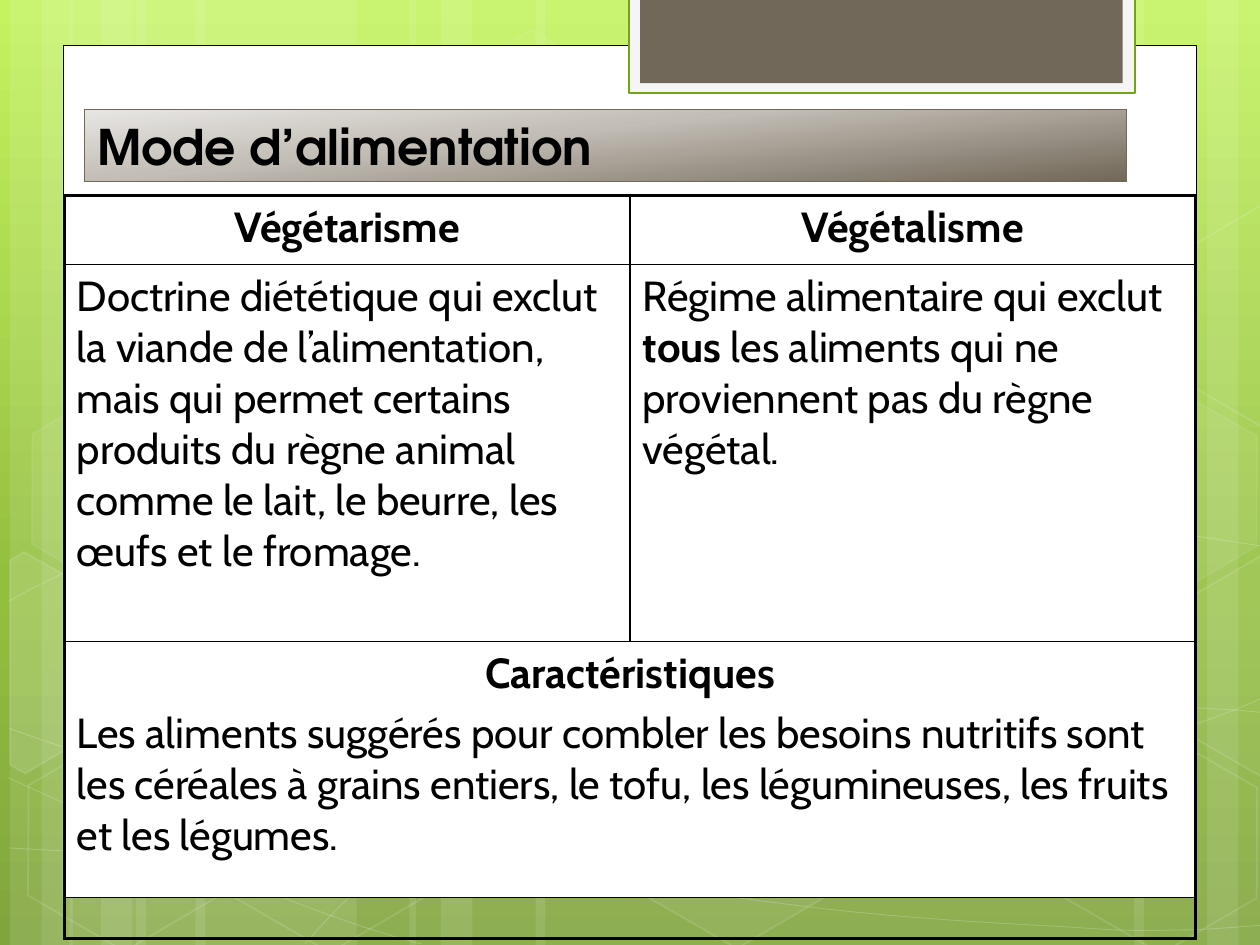
"""Build a slide that compares two plant-based diets in a table."""
from copy import deepcopy

from lxml.etree import SubElement
from pptx import Presentation
from pptx.dml.color import RGBColor
from pptx.enum.shapes import MSO_SHAPE
from pptx.enum.text import MSO_ANCHOR, MSO_AUTO_SIZE, PP_ALIGN
from pptx.oxml import parse_xml
from pptx.oxml.ns import nsdecls, qn
from pptx.util import Cm, Pt

TITLE = "Mode d’alimentation"
HEADS = ["Végétarisme", "Végétalisme"]
DEFINITIONS = [
    [("Doctrine diététique qui exclut la viande de l’alimentation, mais qui permet certains "
      "produits du règne animal comme le lait, le beurre, les œufs et le fromage.", False)],
    [("Régime alimentaire qui exclut ", False), ("tous", True),
     (" les aliments qui ne proviennent pas du règne végétal.", False)],
]
FEATURES_HEAD = "Caractéristiques"
FEATURES = ("Les aliments suggérés pour combler les besoins nutritifs sont les céréales à grains "
            "entiers, le tofu, les légumineuses, les fruits et les légumes.")
COL_WIDTH = 4.49
ROW_HEIGHTS = [0.55, 2.99, 2.36]

BACKGROUND = [(0, "C3F35F"), (62, "93BF3F"), (100, "81A53E")]
TITLE_BAR = [(0, "E8E6E4"), (40, "C2BDB5"), (100, "726859")]
STRIPES = [(1.08, 1.75), (0.08, 0.5), (0.33, 0.83), (1.55, 1.75), (0.55, 0.5), (0.8, 0.83),
           (7.33, 1.75), (9.58, 0.5), (9, 0.83), (4.25, 3.08), (3.25, 0.5), (3.5, 0.83)]
CURVES = [
    [(0.07, 6.73), (0.61, 6.76), (1.15, 6.79), (1.9, 6.78), (2.65, 6.77), (3.58, 6.75),
     (4.58, 6.65), (5.58, 6.55), (7, 6.36), (7.92, 6.17), (8.83, 5.98), (9.77, 5.68),
     (10.07, 5.51)],
    [(0.07, 4.77), (0.36, 4.61), (0.65, 4.46), (1.21, 4.31), (1.78, 4.16), (2.59, 3.94),
     (3.47, 3.87), (4.36, 3.8), (5.44, 3.79), (6.54, 3.87), (7.64, 3.95), (9.47, 4.26),
     (10.07, 4.34)],
    [(0.06, 6.17), (1.27, 6.72), (2.47, 7.27), (3.34, 7.49)],
    [(0.07, 5.78), (0.38, 5.89), (0.7, 6), (1.28, 6.16), (1.86, 6.31), (2.73, 6.56),
     (3.57, 6.73), (4.4, 6.9), (5.45, 7.08), (6.28, 7.18), (7.11, 7.29), (8, 7.33),
     (8.53, 7.36), (9.05, 7.4), (9.19, 7.38), (9.45, 7.38), (9.71, 7.37), (9.89, 7.35),
     (10.07, 7.34)],
    [(2.42, 7.49), (2.6, 7.29), (2.78, 7.09), (3.02, 6.91), (3.26, 6.73), (3.6, 6.53),
     (3.88, 6.39), (4.16, 6.25), (4.33, 6.19), (4.7, 6.09), (5.06, 5.99), (5.73, 5.85),
     (6.08, 5.78), (6.44, 5.71), (6.49, 5.71), (6.8, 5.69), (7.11, 5.66), (7.6, 5.63),
     (7.94, 5.62), (8.29, 5.61), (8.86, 5.62), (8.86, 5.62), (9.08, 5.62), (9.31, 5.62),
     (9.53, 5.62), (9.71, 5.63), (9.88, 5.64), (9.97, 5.65), (10.06, 5.66), (10.03, 5.65),
     (10.06, 5.66)],
]
HEXAGONS = [(3.34, 0.36, 4, 8), (4.97, 5.89, 6, 12), (0.11, 5.91, 0, 12), (0.14, 3.12, 7, 8),
            (1.74, 5.92, 0, 12), (7.53, 4.53, 10, 12), (8.34, 5.93, 0, 12), (8.34, 3.14, 7, 8)]
CUT_HEXAGONS = [
    (10, [(0.08, 4.45), (0.19, 4.38), (0.96, 4.82), (0.95, 5.7), (0.2, 6.14), (0.08, 6.07)]),
    (4, [(9.26, 4.85), (10.01, 4.41), (10.09, 4.46), (10.09, 6.13), (10.02, 6.17), (9.26, 5.73)]),
    (0, [(9.26, 2.07), (10.01, 1.63), (10.1, 1.68), (10.09, 3.35), (10.02, 3.39), (9.26, 2.95)]),
]
PANELS = [((0.5, 0.36, 9, 6.76), "FFFFFF", "000000", 0.5),
          ((4.99, -0.02, 4.02, 0.76), "F5F5F5", "74A510", 1.25),
          ((5.08, -0.02, 3.83, 0.68), "71685A", None, 0)]


def inch(*values):
    return [Cm(v * 2.54) for v in values]


def paint(fill, color, alpha=100):
    if not color or not alpha:
        fill.background()
        return
    fill.solid()
    fill.fore_color.rgb = RGBColor.from_string(color)
    if alpha < 100:
        clr = fill._xPr.find(qn("a:solidFill"))[0]
        SubElement(clr, qn("a:alpha")).set("val", str(alpha * 1000))


def gradient(fill, stops, angle):
    fill.gradient()
    fill.gradient_angle = 360 - angle
    gs_list = fill.gradient_stops[0]._gs.getparent()
    gs_list.append(deepcopy(gs_list[0]))
    for stop, (position, color) in zip(fill.gradient_stops, stops):
        stop.position = position / 100
        stop.color.rgb = RGBColor.from_string(color)


def style(shape, fill=None, alpha=100, line=None, width=0, line_alpha=100):
    shape.shadow.inherit = False
    paint(shape.fill, fill, alpha)
    paint(shape.line.fill, line, line_alpha)
    if line:
        shape.line.width = Pt(width)


def outline(shapes, points, close):
    start, *rest = [inch(*p) for p in points]
    builder = shapes.build_freeform(*start)
    builder.add_line_segments(rest, close=close)
    return builder.convert_to_shape()


def curve(shapes, points):
    sp = outline(shapes, points, False)
    lines = list(sp._element.iter(qn("a:lnTo")))
    for i in range(0, len(lines), 3):
        first, *others = lines[i:i + 3]
        bezier = SubElement(first.getparent(), qn("a:cubicBezTo"))
        for line in (first, *others):
            bezier.append(line[0])
            line.getparent().remove(line)
    return sp


def format_runs(p, size, font, bolds):
    for r, bold in zip(p.runs, bolds):
        r.font.size, r.font.name, r.font.bold = Pt(size), font, bold
        r.font.color.rgb = RGBColor.from_string("000000")


def write(p, parts, align=PP_ALIGN.LEFT):
    for text, _ in parts:
        p.add_run().text = text
    p.alignment, p.space_before = align, Pt(5.2)
    format_runs(p, 24, "Cabin", [bold for _, bold in parts])


def border(cell, edges):
    tc_pr = cell._tc.get_or_add_tcPr()
    for i, (side, outer) in enumerate(zip("LRTB", edges)):
        tc_pr.insert(i, parse_xml(
            f'<a:ln{side} {nsdecls("a")} w="{Pt(2.25 if outer else 1)}"><a:solidFill>'
            f'<a:srgbClr val="000000"/></a:solidFill></a:ln{side}>'))


def add_backdrop(s):
    gradient(s.background.fill, BACKGROUND, 90)
    for left, width in STRIPES:
        style(s.shapes.add_shape(MSO_SHAPE.RECTANGLE, *inch(left, 0, width, 7.5)), "FFFFFF", 10)
    for points in CURVES:
        style(curve(s.shapes, points), line="FFFFFF", width=0.5, line_alpha=20)
    for left, top, alpha, line_alpha in HEXAGONS:
        sp = s.shapes.add_shape(MSO_SHAPE.HEXAGON, *inch(left, top, 1.75, 1.52))
        sp.adjustments[0], sp.adjustments[1] = 0.285, 1.155
        sp.rotation = 30
        style(sp, "FFFFFF", alpha, "FFFFFF", 1, line_alpha)
    for alpha, points in CUT_HEXAGONS:
        style(outline(s.shapes, points, True), "FFFFFF", alpha, "FFFFFF", 1, 12)
    for box, fill, line, width in PANELS:
        style(s.shapes.add_shape(MSO_SHAPE.RECTANGLE, *inch(*box)), fill, 100, line, width)


def add_diets(s):
    frame = s.shapes.add_table(3, 2, *inch(0.51, 1.55, 2 * COL_WIDTH, sum(ROW_HEIGHTS)))
    table = frame.table
    table.first_row = table.horz_banding = False
    for row, height in zip(table.rows, ROW_HEIGHTS):
        row.height, = inch(height)
    for c, column in enumerate(table.columns):
        column.width, = inch(COL_WIDTH)
        write(table.cell(0, c).text_frame.paragraphs[0], [(HEADS[c], True)], PP_ALIGN.CENTER)
        write(table.cell(1, c).text_frame.paragraphs[0], DEFINITIONS[c])
    features = table.cell(2, 0)
    features.merge(table.cell(2, 1))
    tf = features.text_frame
    write(tf.paragraphs[0], [(FEATURES_HEAD, True)], PP_ALIGN.CENTER)
    write(tf.add_paragraph(), [(FEATURES, False)])
    for r in range(3):
        for c in range(2):
            cell = table.cell(r, c)
            cell.fill.background()
            border(cell, (c == 0, c == 1 or r == 2, r == 0, r == 2))


def add_title(s):
    title = s.shapes.title
    title.left, title.top, title.width, title.height = inch(0.67, 0.87, 8.27, 0.57)
    gradient(title.fill, TITLE_BAR, 84)
    paint(title.line.fill, "71685A")
    title.line.width = Pt(0.75)
    tf = title.text_frame
    tf.text = TITLE
    tf.word_wrap, tf.auto_size = True, MSO_AUTO_SIZE.NONE
    tf.vertical_anchor = MSO_ANCHOR.MIDDLE
    p = tf.paragraphs[0]
    p.alignment = PP_ALIGN.LEFT
    format_runs(p, 28, "TeX Gyre Adventor", [True])
    s.shapes._spTree.append(title._element)


def main():
    prs = Presentation()
    prs.slide_width, prs.slide_height = inch(10, 7.5)
    s = prs.slides.add_slide(prs.slide_layouts[5])
    add_backdrop(s)
    add_diets(s)
    add_title(s)
    prs.save("out.pptx")


if __name__ == "__main__":
    main()
